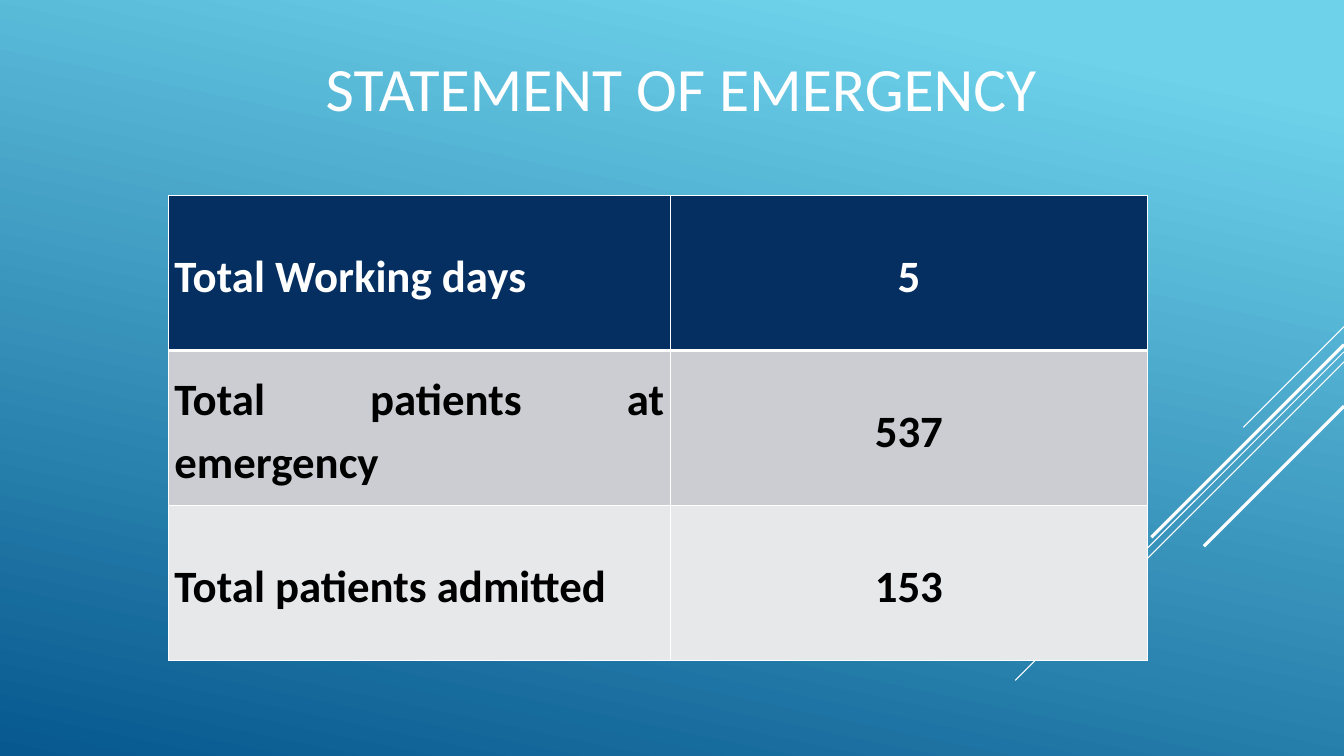
from typing import NamedTuple

from lxml import etree
from pptx import Presentation
from pptx.dml.color import RGBColor
from pptx.enum.shapes import MSO_CONNECTOR
from pptx.enum.text import MSO_ANCHOR, PP_ALIGN
from pptx.oxml.ns import qn
from pptx.util import Inches, Pt

STRAIGHT = MSO_CONNECTOR.STRAIGHT
MIDDLE = MSO_ANCHOR.MIDDLE
CENTER, JUSTIFY = PP_ALIGN.CENTER, PP_ALIGN.JUSTIFY

FONT = "Calibri"
WHITE, BLACK = "FFFFFF", "000000"
SLIDE_WIDTH, SLIDE_HEIGHT = 13.33, 7.5


class Ray(NamedTuple):
    """A diagonal that starts at the right edge and runs down to the left."""
    top: float
    reach: float
    weight: float


class Statistic(NamedTuple):
    label: str
    value: str
    fill: str
    color: str


RAYS = [
    Ray(3.24, 1.0, 0.75),
    Ray(3.49, 3.26, 0.75),
    Ray(3.59, 2.07, 0.75),
    Ray(3.42, 1.91, 2.25),
    Ray(4.03, 1.39, 2.25),
]
STATISTICS = [
    Statistic("Total Working days", "5", "052F61", WHITE),
    Statistic("Total patients at emergency", "537", "CCCDD2", BLACK),
    Statistic("Total patients admitted", "153", "E7E8EA", BLACK),
]
COLUMN_WIDTHS = [4.98, 4.73]
TABLE_HEIGHT = 4.61


def rgb(color: str) -> RGBColor:
    return RGBColor.from_string(color)


def paint_background(slide) -> None:
    fill = slide.background.fill
    fill.gradient()
    fill.gradient_angle = 360 - 102
    for stop, position, color in zip(fill.gradient_stops, (0.1, 1), ("6ED2EB", "06588E")):
        stop.position = position
        stop.color.rgb = rgb(color)


def draw_ray(slide, ray: Ray) -> None:
    line = slide.shapes.add_connector(
        STRAIGHT, Inches(SLIDE_WIDTH), Inches(ray.top),
        Inches(SLIDE_WIDTH - ray.reach), Inches(ray.top + ray.reach))
    line.line.color.rgb = rgb(WHITE)
    line.line.width = Pt(ray.weight)
    etree.SubElement(line._element.spPr, qn("a:effectLst"))


def style_text(paragraph, size: float, color: str, bold: bool = False) -> None:
    for run in paragraph.runs:
        run.font.name = FONT
        run.font.size = Pt(size)
        run.font.bold = bold
        run.font.color.rgb = rgb(color)


def draw_title(slide) -> None:
    title = slide.shapes.add_textbox(Inches(1.49), Inches(0.04), Inches(9.33), Inches(1.65))
    frame = title.text_frame
    frame.word_wrap = True
    frame.vertical_anchor = MIDDLE
    frame.margin_left = Inches(1.74)
    frame.text = "STATEMENT OF EMERGENCY"
    style_text(frame.paragraphs[0], 44, WHITE)


def set_borders(cell, top: float, bottom: float) -> None:
    properties = cell._tc.get_or_add_tcPr()
    for side, weight in (("L", 1), ("R", 1), ("T", top), ("B", bottom)):
        border = etree.SubElement(properties, qn(f"a:ln{side}"), w=str(Pt(weight)))
        fill = etree.SubElement(border, qn("a:solidFill"))
        etree.SubElement(fill, qn("a:srgbClr"), val=WHITE)


def draw_table(slide) -> None:
    table = slide.shapes.add_table(
        len(STATISTICS), len(COLUMN_WIDTHS), Inches(1.67), Inches(1.94),
        Inches(sum(COLUMN_WIDTHS)), Inches(TABLE_HEIGHT)).table
    for column, width in zip(table.columns, COLUMN_WIDTHS):
        column.width = Inches(width)
    for index, statistic in enumerate(STATISTICS):
        table.rows[index].height = Inches(TABLE_HEIGHT / len(STATISTICS))
        texts = (statistic.label, statistic.value)
        for cell, text, alignment in zip(table.rows[index].cells, texts, (JUSTIFY, CENTER)):
            # A heavier rule separates the first row from the rest
            set_borders(cell, top=3 if index == 1 else 1, bottom=3 if index == 0 else 1)
            cell.fill.solid()
            cell.fill.fore_color.rgb = rgb(statistic.fill)
            cell.vertical_anchor = MIDDLE
            cell.margin_left = cell.margin_right = Inches(0.06)
            cell.margin_top = cell.margin_bottom = Inches(0)
            cell.text_frame.text = text
            paragraph = cell.text_frame.paragraphs[0]
            paragraph.alignment = alignment
            paragraph.line_spacing = 1.15
            style_text(paragraph, 32, statistic.color, bold=True)


def main() -> None:
    presentation = Presentation()
    presentation.slide_width = Inches(SLIDE_WIDTH)
    presentation.slide_height = Inches(SLIDE_HEIGHT)
    slide = presentation.slides.add_slide(presentation.slide_layouts[6])

    # Backdrop
    paint_background(slide)
    for ray in RAYS:
        draw_ray(slide, ray)

    # Content
    draw_title(slide)
    draw_table(slide)
    presentation.save("out.pptx")


if __name__ == "__main__":
    main()
